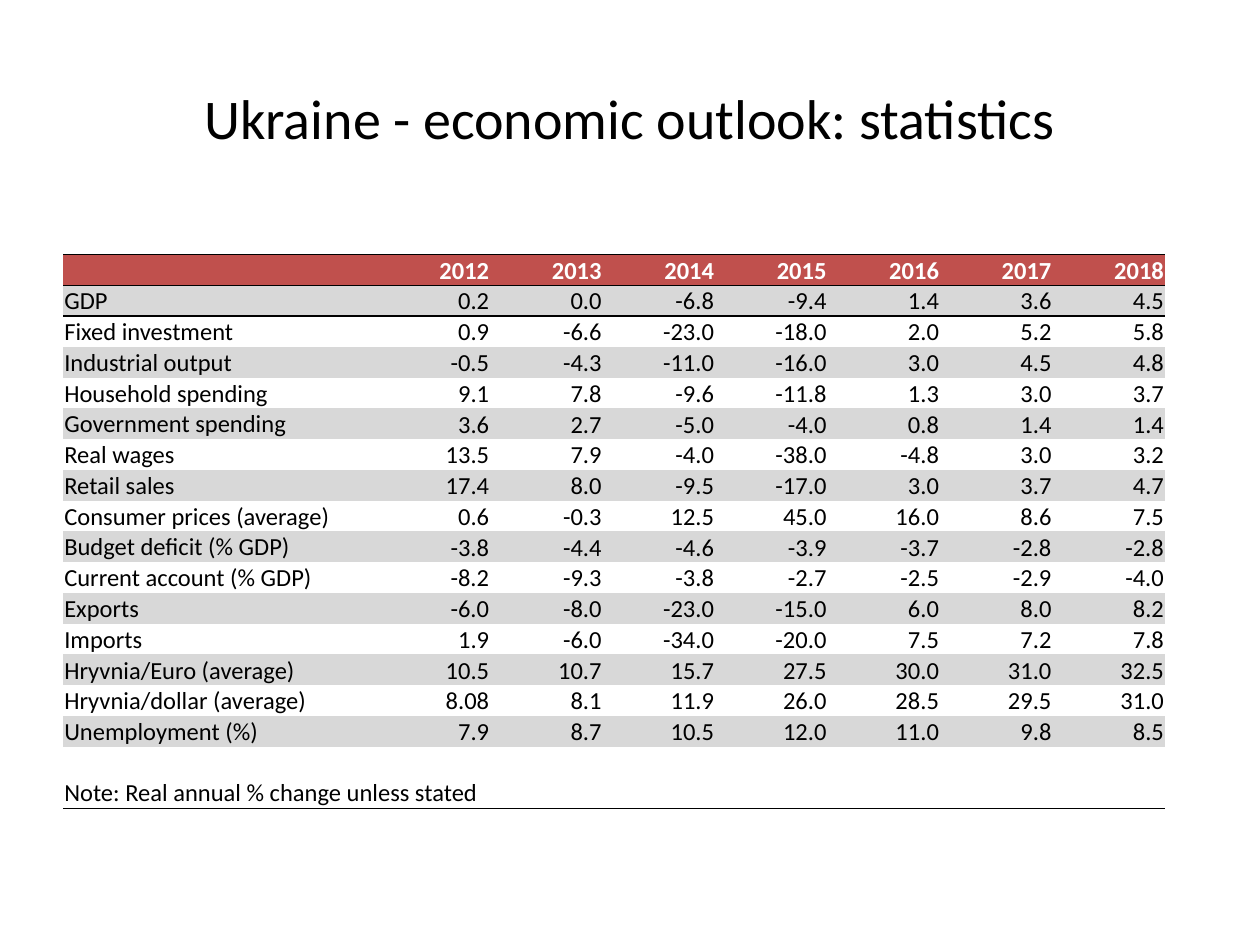
from dataclasses import dataclass

import lxml.etree
import pptx
import pptx.dml.color
import pptx.enum.text
import pptx.oxml.ns
import pptx.util

EMU_PER_PX = 9525  # 96 px to the inch
NO_GRID_STYLE = "{2D5ABB26-0587-4C30-8999-92F81FD0307C}"
ALIGN = pptx.enum.text.PP_ALIGN
ANCHOR = pptx.enum.text.MSO_ANCHOR


@dataclass(frozen=True)
class Theme:
    font: str = "Calibri"
    title_size: int = 32
    table_size: int = 14
    text: str = "000000"
    header_text: str = "FFFFFF"
    header_fill: str = "C0504D"
    band_fill: str = "D8D8D8"
    rule: str = "000000"
    rule_width: int = 1


@dataclass(frozen=True)
class Indicator:
    name: str
    values: str  # one value per year, separated by spaces


@dataclass(frozen=True)
class RowLook:
    fill: str | None = None
    color: str = Theme.text
    bold: bool = False
    rules: tuple[str, ...] = ()


THEME = Theme()
TITLE = "Ukraine - economic outlook: statistics"
NOTE = "Note: Real annual % change unless stated"
YEARS = [str(year) for year in range(2012, 2019)]
INDICATORS = [
    Indicator("GDP", "0.2 0.0 -6.8 -9.4 1.4 3.6 4.5"),
    Indicator("Fixed investment", "0.9 -6.6 -23.0 -18.0 2.0 5.2 5.8"),
    Indicator("Industrial output", "-0.5 -4.3 -11.0 -16.0 3.0 4.5 4.8"),
    Indicator("Household spending", "9.1 7.8 -9.6 -11.8 1.3 3.0 3.7"),
    Indicator("Government spending", "3.6 2.7 -5.0 -4.0 0.8 1.4 1.4"),
    Indicator("Real wages", "13.5 7.9 -4.0 -38.0 -4.8 3.0 3.2"),
    Indicator("Retail sales", "17.4 8.0 -9.5 -17.0 3.0 3.7 4.7"),
    Indicator("Consumer prices (average)", "0.6 -0.3 12.5 45.0 16.0 8.6 7.5"),
    Indicator("Budget deficit (% GDP)", "-3.8 -4.4 -4.6 -3.9 -3.7 -2.8 -2.8"),
    Indicator("Current account (% GDP)", "-8.2 -9.3 -3.8 -2.7 -2.5 -2.9 -4.0"),
    Indicator("Exports", "-6.0 -8.0 -23.0 -15.0 6.0 8.0 8.2"),
    Indicator("Imports", "1.9 -6.0 -34.0 -20.0 7.5 7.2 7.8"),
    Indicator("Hryvnia/Euro (average)", "10.5 10.7 15.7 27.5 30.0 31.0 32.5"),
    Indicator("Hryvnia/dollar (average)", "8.08 8.1 11.9 26.0 28.5 29.5 31.0"),
    Indicator("Unemployment (%)", "7.9 8.7 10.5 12.0 11.0 9.8 8.5"),
]

# Table geometry in px
TABLE_LEFT, TABLE_TOP, TABLE_WIDTH = 48, 194, 840
NAME_WIDTH = 240
HEADER_HEIGHT, ROW_HEIGHT, NOTE_HEIGHT = 14, 21, 47


def px(length: int) -> pptx.util.Emu:
    return pptx.util.Emu(length * EMU_PER_PX)


def write_text(text_frame, text: str, *, size: int, color: str = THEME.text,
               bold: bool = False, align=ALIGN.LEFT) -> None:
    paragraph = text_frame.paragraphs[0]
    paragraph.alignment = align
    if not text:
        # An empty cell still needs a type size, or it stretches its row
        lxml.etree.SubElement(paragraph._p, pptx.oxml.ns.qn("a:endParaRPr"), sz=str(size * 100))
        return
    run = paragraph.add_run()
    run.text = text
    run.font.name = THEME.font
    run.font.size = pptx.util.Pt(size)
    run.font.bold = bold
    run.font.color.rgb = pptx.dml.color.RGBColor.from_string(color)


def add_rule(cell, side: str) -> None:
    """Draw one border of a cell; side is T or B."""
    qn = pptx.oxml.ns.qn
    line = lxml.etree.SubElement(cell._tc.get_or_add_tcPr(), qn(f"a:ln{side}"),
                                 w=str(pptx.util.Pt(THEME.rule_width)))
    fill = lxml.etree.SubElement(line, qn("a:solidFill"))
    lxml.etree.SubElement(fill, qn("a:srgbClr"), val=THEME.rule)


def fill_row(table, row: int, texts: list[str], look: RowLook) -> None:
    for column, text in enumerate(texts):
        cell = table.cell(row, column)
        cell.margin_left = cell.margin_right = cell.margin_top = px(1)
        cell.margin_bottom = 0
        is_name = column == 0
        cell.vertical_anchor = ANCHOR.BOTTOM if is_name else ANCHOR.MIDDLE
        write_text(cell.text_frame, text, size=THEME.table_size, color=look.color,
                   bold=look.bold, align=ALIGN.LEFT if is_name else ALIGN.RIGHT)
        # Borders come before the fill in the cell properties
        for side in look.rules:
            add_rule(cell, side)
        if look.fill:
            cell.fill.solid()
            cell.fill.fore_color.rgb = pptx.dml.color.RGBColor.from_string(look.fill)
        else:
            cell.fill.background()


def add_title(slide) -> None:
    text_frame = slide.shapes.add_textbox(px(48), px(29), px(864), px(120)).text_frame
    text_frame.word_wrap = True
    text_frame.vertical_anchor = ANCHOR.MIDDLE
    write_text(text_frame, TITLE, size=THEME.title_size, align=ALIGN.CENTER)


def add_statistics(slide) -> None:
    heights = [HEADER_HEIGHT, *[ROW_HEIGHT] * len(INDICATORS), NOTE_HEIGHT]
    table = slide.shapes.add_table(len(heights), 1 + len(YEARS), px(TABLE_LEFT), px(TABLE_TOP),
                                   px(TABLE_WIDTH), px(sum(heights))).table
    table.first_row = table.horz_banding = False
    table._tbl.tblPr.find(pptx.oxml.ns.qn("a:tableStyleId")).text = NO_GRID_STYLE
    for row, height in zip(table.rows, heights):
        row.height = px(height)
    year_width = px(TABLE_WIDTH - NAME_WIDTH) // len(YEARS)
    for index, column in enumerate(table.columns):
        column.width = pptx.util.Emu(year_width) if index else px(NAME_WIDTH)

    # Header
    fill_row(table, 0, ["", *YEARS],
             RowLook(THEME.header_fill, THEME.header_text, bold=True, rules=("T", "B")))

    # Indicators, every other row shaded
    for row, indicator in enumerate(INDICATORS, start=1):
        fill_row(table, row, [indicator.name, *indicator.values.split()],
                 RowLook(THEME.band_fill if row % 2 else None,
                         rules=("T",) if row == 1 else ()))

    # Note, across all columns but the last
    note_row = len(heights) - 1
    fill_row(table, note_row, [NOTE, *[""] * len(YEARS)], RowLook(rules=("B",)))
    table.cell(note_row, 0).merge(table.cell(note_row, len(YEARS) - 1))


def main() -> None:
    presentation = pptx.Presentation()
    presentation.slide_width, presentation.slide_height = px(960), px(720)
    slide = presentation.slides.add_slide(presentation.slide_layouts[6])
    add_title(slide)
    add_statistics(slide)
    presentation.save("out.pptx")


if __name__ == "__main__":
    main()
